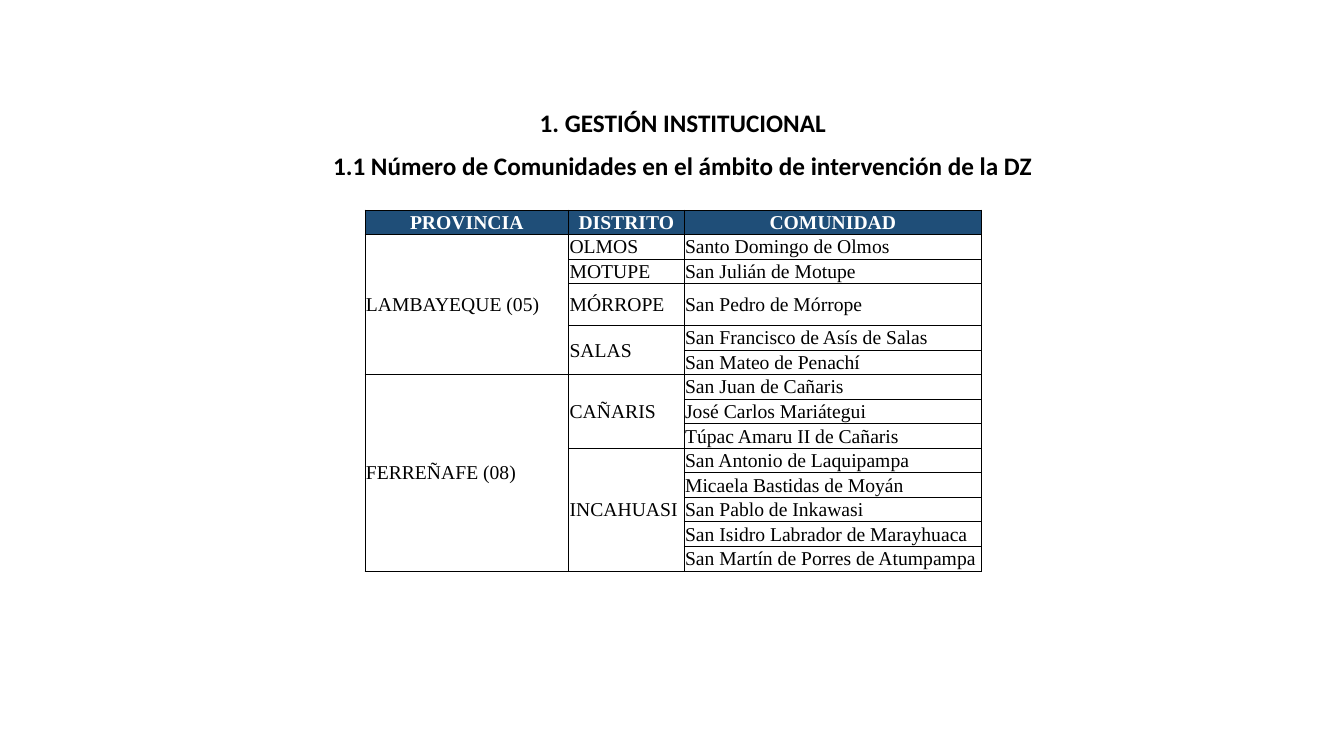
from lxml.etree import fromstring
from pptx import Presentation
from pptx.dml.color import RGBColor as RGB
from pptx.enum.text import MSO_ANCHOR as ANCHOR, MSO_AUTO_SIZE as FIT, PP_ALIGN as ALIGN
from pptx.util import Pt

COLORS = {"black": "000000", "white": "FFFFFF", "header": "1F4E78"}
NS = "http://schemas.openxmlformats.org/drawingml/2006/main"

HEADERS = ["PROVINCIA", "DISTRITO", "COMUNIDAD"]
PROVINCES = {
    "LAMBAYEQUE (05)": {
        "OLMOS": ["Santo Domingo de Olmos"],
        "MOTUPE": ["San Julián de Motupe"],
        "MÓRROPE": ["San Pedro de Mórrope"],
        "SALAS": ["San Francisco de Asís de Salas", "San Mateo de Penachí"],
    },
    "FERREÑAFE (08)": {
        "CAÑARIS": ["San Juan de Cañaris", "José Carlos Mariátegui",
                    "Túpac Amaru II de Cañaris"],
        "INCAHUASI": ["San Antonio de Laquipampa", "Micaela Bastidas de Moyán",
                      "San Pablo de Inkawasi", "San Isidro Labrador de Marayhuaca",
                      "San Martín de Porres de Atumpampa"],
    },
}
COL_WIDTHS = [145.5, 82.5, 212.5]
ROW_HEIGHT = 17.5
TALL_ROWS = {3: 30}


class SlideBuilder:
    title_font, title_size = "Calibri", 18
    table_font, table_size = "Times New Roman", 14

    def __init__(self, prs):
        self.s = prs.slides.add_slide(prs.slide_layouts[5])

    def style(self, p, font, size, color, bold, align):
        p.alignment = align
        for r in p.runs:
            r.font.name = font
            r.font.size = Pt(size)
            r.font.bold = bold
            r.font.color.rgb = RGB.from_string(COLORS[color])

    def title(self, lines, x, y, w, h):
        sp = self.s.shapes.title
        sp.left, sp.top, sp.width, sp.height = Pt(x), Pt(y), Pt(w), Pt(h)
        tf = sp.text_frame
        tf.text = "\n".join(lines)
        tf.word_wrap = True
        tf.auto_size = FIT.SHAPE_TO_FIT_TEXT
        tf.vertical_anchor = ANCHOR.TOP
        for p in tf.paragraphs:
            self.style(p, self.title_font, self.title_size, "black", True, ALIGN.CENTER)
            p.line_spacing = 1.07
            p.space_after = Pt(8)
        p.space_after = Pt(0)

    def borders(self, cell):
        tcPr = cell._tc.get_or_add_tcPr()
        for i, side in enumerate(("lnL", "lnR", "lnT", "lnB")):
            tcPr.insert(i, fromstring(
                f'<a:{side} xmlns:a="{NS}" w="{Pt(0.5)}"><a:solidFill>'
                f'<a:srgbClr val="{COLORS["black"]}"/></a:solidFill></a:{side}>'))

    def cell(self, cell, header):
        cell.margin_left = cell.margin_right = cell.margin_top = Pt(0.7)
        cell.margin_bottom = 0
        cell.vertical_anchor = ANCHOR.MIDDLE
        if header:
            cell.fill.solid()
            cell.fill.fore_color.rgb = RGB.from_string(COLORS["header"])
        else:
            cell.fill.background()
        self.borders(cell)
        self.style(cell.text_frame.paragraphs[0], self.table_font, self.table_size,
                   "white" if header else "black", header,
                   ALIGN.CENTER if header else ALIGN.LEFT)

    def table(self, x, y, headers, provinces, widths, row_height, tall_rows):
        count = 1 + sum(len(c) for d in provinces.values() for c in d.values())
        heights = [tall_rows.get(i, row_height) for i in range(count)]
        table = self.s.shapes.add_table(count, len(headers), Pt(x), Pt(y),
                                        Pt(sum(widths)), Pt(sum(heights))).table
        for col, w in zip(table.columns, widths):
            col.width = Pt(w)
        for row, h in zip(table.rows, heights):
            row.height = Pt(h)
        for c, text in enumerate(headers):
            table.cell(0, c).text = text
        row = 1
        for province, districts in provinces.items():
            top = row
            table.cell(top, 0).text = province
            for district, communities in districts.items():
                first = row
                table.cell(first, 1).text = district
                for community in communities:
                    table.cell(row, 2).text = community
                    row += 1
                if len(communities) > 1:
                    table.cell(first, 1).merge(table.cell(row - 1, 1))
            table.cell(top, 0).merge(table.cell(row - 1, 0))
        for i in range(count):
            for c in range(len(headers)):
                self.cell(table.cell(i, c), i == 0)


def main():
    prs = Presentation()
    prs.slide_width, prs.slide_height = Pt(960), Pt(540)
    slide = SlideBuilder(prs)
    slide.title(["1. GESTIÓN INSTITUCIONAL",
                 "1.1 Número de Comunidades en el ámbito de intervención de la DZ"],
                54.7, 71.3, 866, 62)
    slide.table(260.7, 150, HEADERS, PROVINCES, COL_WIDTHS, ROW_HEIGHT, TALL_ROWS)
    prs.save("out.pptx")


if __name__ == "__main__":
    main()
